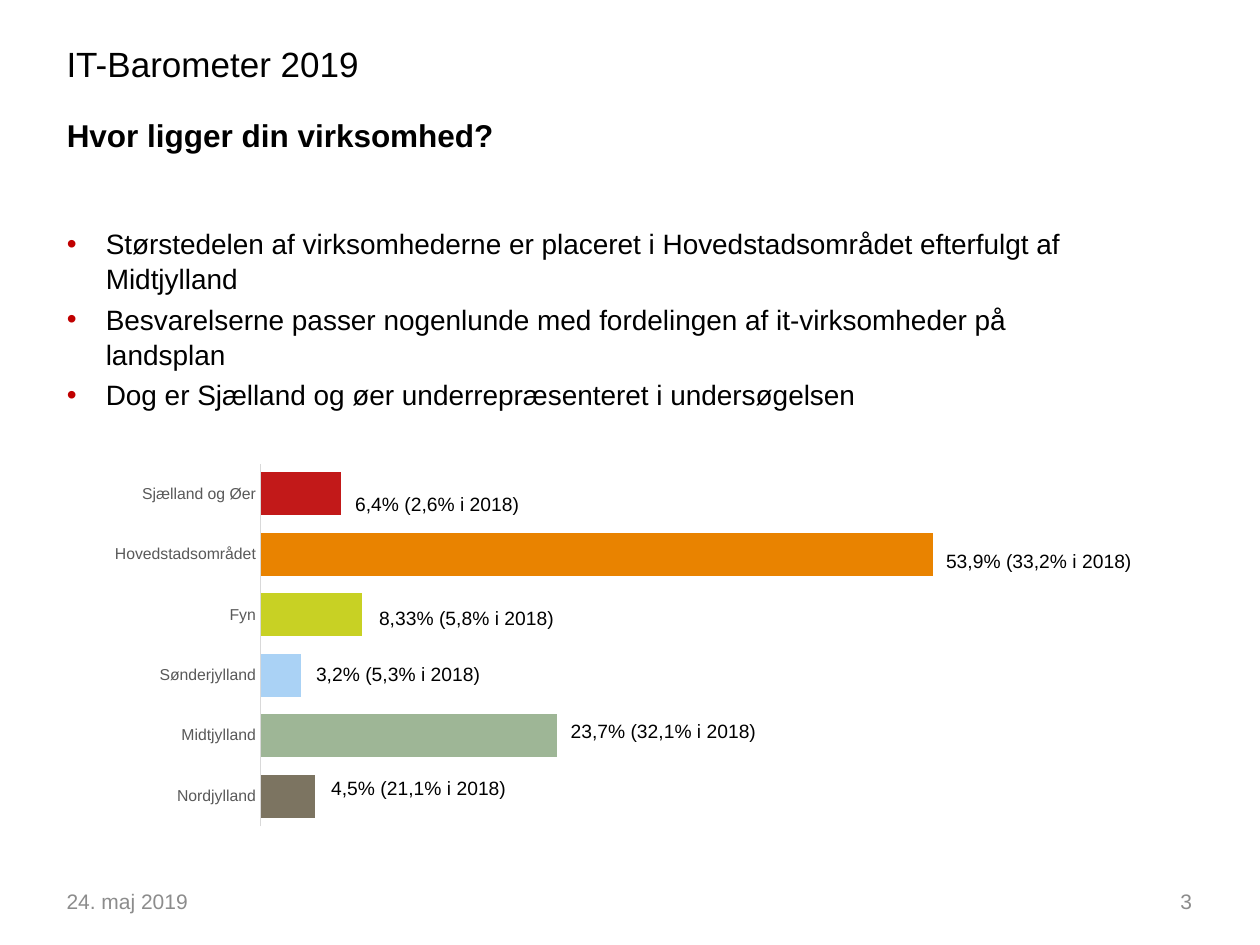
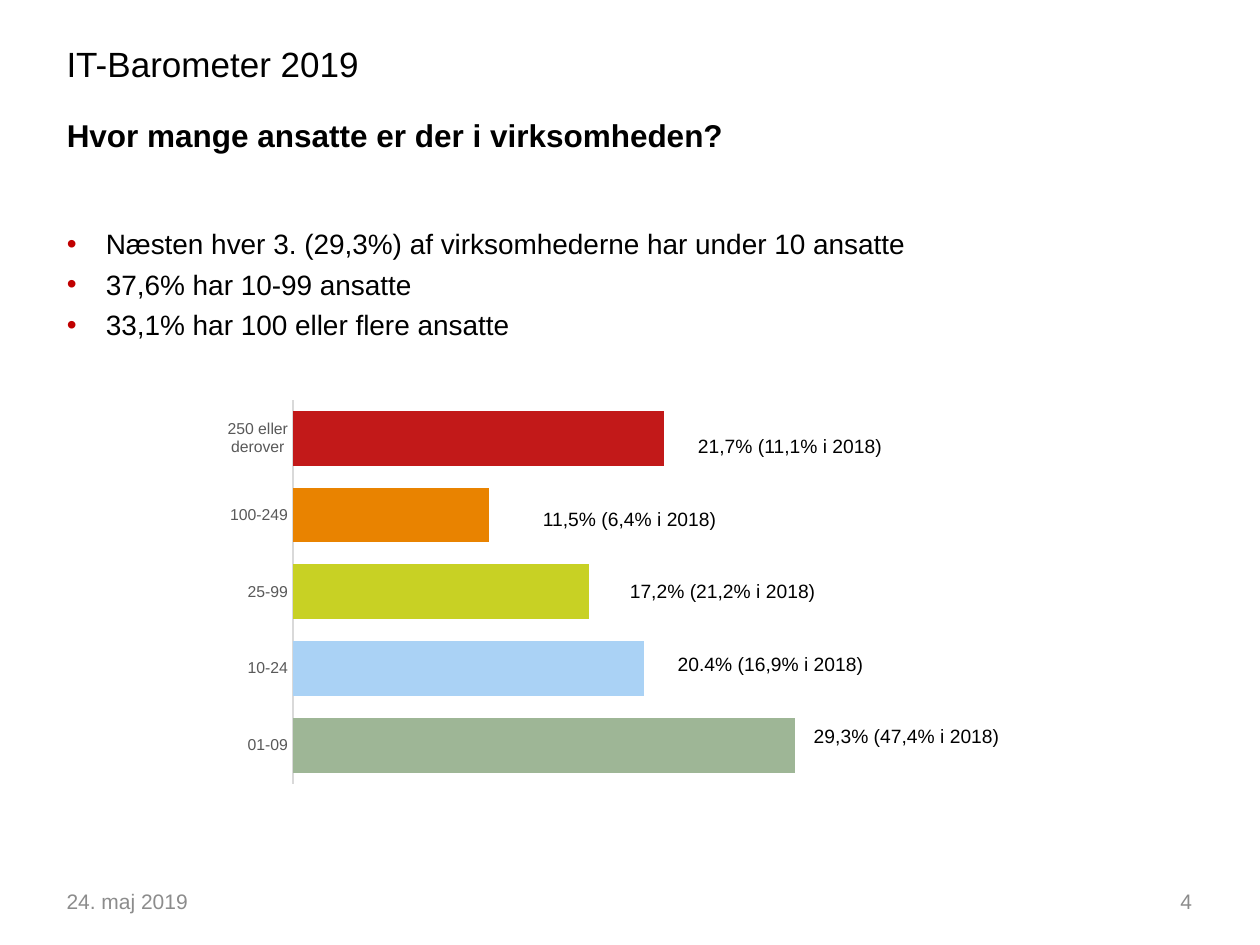
from lxml.etree import SubElement
from pptx import Presentation
from pptx.chart.data import CategoryChartData
from pptx.dml.color import RGBColor
from pptx.enum.chart import XL_CHART_TYPE, XL_TICK_MARK
from pptx.enum.text import MSO_ANCHOR, MSO_AUTO_SIZE, PP_ALIGN
from pptx.oxml.ns import qn
from pptx.util import Inches, Pt

FONT = "Arial"
COLUMNS, ROWS = 100, 75
C = {"text": "000000", "footer": "8C8C8C", "bullet": "C00000",
     "axis": "D9D9D9", "category": "595959"}
BARS = ["C21919", "E98300", "C8D124", "AAD2F5", "9EB696", "7C7461"]
DECK, DATE = "IT-Barometer 2019", "24. maj 2019"
TITLE_BOX = (4.3, 8.7, 90, 5.5)
SLIDES = [
    {"number": 3,
     "title": "Hvor ligger din virksomhed?",
     "bullets": [
         "Størstedelen af virksomhederne er placeret i Hovedstadsområdet efterfulgt af Midtjylland",
         "Besvarelserne passer nogenlunde med fordelingen af it-virksomheder på landsplan",
         "Dog er Sjælland og øer underrepræsenteret i undersøgelsen"],
     "bullet_rows": 23.3,
     "chart_box": (7.7, 36.3, 73.9, 30),
     "plot_box": (20.7, 36.8, 53.35, 28.8),
     "label_top": 38.6, "label_step": 4.5,
     "bars": [("Sjælland og Øer", 12, "6,4% (2,6% i 2018)", 27.2),
              ("Hovedstadsområdet", 100, "53,9% (33,2% i 2018)", 74.1),
              ("Fyn", 15, "8,33% (5,8% i 2018)", 29.1),
              ("Sønderjylland", 6, "3,2% (5,3% i 2018)", 24.1),
              ("Midtjylland", 44, "23,7% (32,1% i 2018)", 44.3),
              ("Nordjylland", 8, "4,5% (21,1% i 2018)", 25.3)]},
    {"number": 4,
     "title": "Hvor mange ansatte er der i virksomheden?",
     "bullets": ["Næsten hver 3. (29,3%) af virksomhederne har under 10 ansatte",
                 "37,6% har 10-99 ansatte",
                 "33,1% har 100 eller flere ansatte"],
     "bullet_rows": 18.7,
     "chart_box": (16.9, 31, 55.1, 31.8),
     "plot_box": (23.25, 31.75, 39.85, 30.45),
     "label_top": 34, "label_step": 5.75,
     "bars": [("250 eller derover", 74, "21,7% (11,1% i 2018)", 54.4),
              ("100-249", 39, "11,5% (6,4% i 2018)", 42.1),
              ("25-99", 59, "17,2% (21,2% i 2018)", 49),
              ("10-24", 70, "20.4% (16,9% i 2018)", 52.8),
              ("01-09", 100, "29,3% (47,4% i 2018)", 63.6)]},
]


def grid(box):
    """Turn a box in columns and rows into slide lengths."""
    left, top, width, height = box
    return (Inches(left * 10 / COLUMNS), Inches(top * 7.5 / ROWS),
            Inches(width * 10 / COLUMNS), Inches(height * 7.5 / ROWS))


def style(font, size, color="text", bold=False):
    """Set typeface, size, colour and weight."""
    font.name, font.size, font.bold = FONT, Pt(size), bold
    font.color.rgb = RGBColor.from_string(C[color])


def place(sp, box, anchor=MSO_ANCHOR.TOP):
    """Move a shape to its box and return its text frame."""
    sp.left, sp.top, sp.width, sp.height = grid(box)
    tf = sp.text_frame
    tf.word_wrap, tf.auto_size, tf.vertical_anchor = True, MSO_AUTO_SIZE.NONE, anchor
    return tf


def add_text(s, box, text, size, color="text", align=PP_ALIGN.LEFT,
             anchor=MSO_ANCHOR.TOP):
    """Add a one-line text box and return its text frame."""
    tf = place(s.shapes.add_textbox(*grid(box)), box, anchor)
    tf.text = text
    p = tf.paragraphs[0]
    p.alignment = align
    style(p.runs[0].font, size, color)
    return tf


def add_frame(s, number):
    """Add the deck name, date and page number."""
    add_text(s, (4.3, 2.9, 31.7, 4), DECK, 20)
    add_text(s, (4.3, 69.5, 23.3, 4), DATE, 12, "footer", anchor=MSO_ANCHOR.MIDDLE)
    add_text(s, (72.3, 69.5, 23.3, 4), str(number), 12, "footer",
             PP_ALIGN.RIGHT, MSO_ANCHOR.MIDDLE)


def fill_title(sp, box, text):
    """Write the question in the title placeholder."""
    tf = place(sp, box)
    tf.text = text
    p = tf.paragraphs[0]
    p.alignment = PP_ALIGN.LEFT
    style(p.runs[0].font, 18, bold=True)


def add_bullet(p):
    """Give a paragraph a hanging red bullet."""
    pPr = p._p.get_or_add_pPr()
    pPr.set("marL", str(Inches(0.31)))
    pPr.set("indent", str(-Inches(0.31)))
    SubElement(SubElement(pPr, qn("a:buClr")), qn("a:srgbClr"), val=C["bullet"])
    SubElement(pPr, qn("a:buFont"), typeface=FONT)
    SubElement(pPr, qn("a:buChar"), char="•")


def fill_bullets(sp, box, lines):
    """Write the findings in the body placeholder."""
    tf = place(sp, box)
    tf.text = "\n".join(lines)
    for i, p in enumerate(tf.paragraphs):
        add_bullet(p)
        p.space_before, p.line_spacing = Pt(3.2 if i else 0), 1.04
        style(p.runs[0].font, 16)


def set_plot(chart, box, plot_box):
    """Fix the inner plot area within the chart box."""
    area = chart._chartSpace.chart.plotArea
    for old in area.findall(qn("c:layout")):
        area.remove(old)
    layout = SubElement(area, qn("c:layout"))
    area.insert(0, layout)
    manual = SubElement(layout, qn("c:manualLayout"))
    shares = {"x": (plot_box[0] - box[0]) / box[2], "y": (plot_box[1] - box[1]) / box[3],
              "w": plot_box[2] / box[2], "h": plot_box[3] / box[3]}
    SubElement(manual, qn("c:layoutTarget"), val="inner")
    for key in "xy":
        SubElement(manual, qn(f"c:{key}Mode"), val="edge")
    for key, share in shares.items():
        SubElement(manual, qn(f"c:{key}"), val=f"{share:.4f}")


def add_bars(s, box, plot_box, bars):
    """Add the bar chart with one colour per category, listed from the top."""
    data = CategoryChartData()
    data.categories = [name for name, *_ in reversed(bars)]
    data.add_series("Series 1", [value for _, value, *_ in reversed(bars)])
    chart = s.shapes.add_chart(XL_CHART_TYPE.BAR_CLUSTERED, *grid(box), data).chart
    chart.has_legend = chart.has_title = False
    style(chart.font, 10)
    plot = chart.plots[0]
    plot.gap_width, plot.overlap, plot.vary_by_categories = 40, -25, False
    axis = chart.category_axis
    axis.major_tick_mark = axis.minor_tick_mark = XL_TICK_MARK.NONE
    axis.format.line.color.rgb = RGBColor.from_string(C["axis"])
    axis.format.line.width = Pt(0.75)
    style(axis.tick_labels.font, 9, "category")
    values = chart.value_axis
    values.visible = values.has_major_gridlines = False
    values.minimum_scale, values.maximum_scale = 0, 100
    values.tick_labels.number_format = "0.00%"
    values.tick_labels.number_format_is_linked = False
    series = plot.series[0]
    series.format.fill.solid()
    series.format.fill.fore_color.rgb = RGBColor.from_string(BARS[0])
    for i, color in enumerate(reversed(BARS[:len(bars)])):
        fill = series.points[i].format.fill
        fill.solid()
        fill.fore_color.rgb = RGBColor.from_string(color)
    set_plot(chart, box, plot_box)


def add_labels(s, bars, top, step):
    """Add the shares beside the bars at equal row steps."""
    for i, (_, _, text, left) in enumerate(bars):
        width = 16.8 - 0.85 * (20 - len(text))
        tf = add_text(s, (left, top + i * step, width, 2.9), text, 11)
        tf.word_wrap, tf.auto_size = False, MSO_AUTO_SIZE.SHAPE_TO_FIT_TEXT


def add_question(prs, q):
    """Add one survey question slide."""
    s = prs.slides.add_slide(prs.slide_layouts[1])
    add_frame(s, q["number"])
    fill_title(s.shapes.title, TITLE_BOX, q["title"])
    fill_bullets(s.placeholders[1], (4.3, 17.4, 82.3, q["bullet_rows"]), q["bullets"])
    add_bars(s, q["chart_box"], q["plot_box"], q["bars"])
    add_labels(s, q["bars"], q["label_top"], q["label_step"])


def main():
    """Build and save the deck."""
    prs = Presentation()
    prs.slide_width, prs.slide_height = Inches(10), Inches(7.5)
    for q in SLIDES:
        add_question(prs, q)
    prs.save("out.pptx")


if __name__ == "__main__":
    main()
